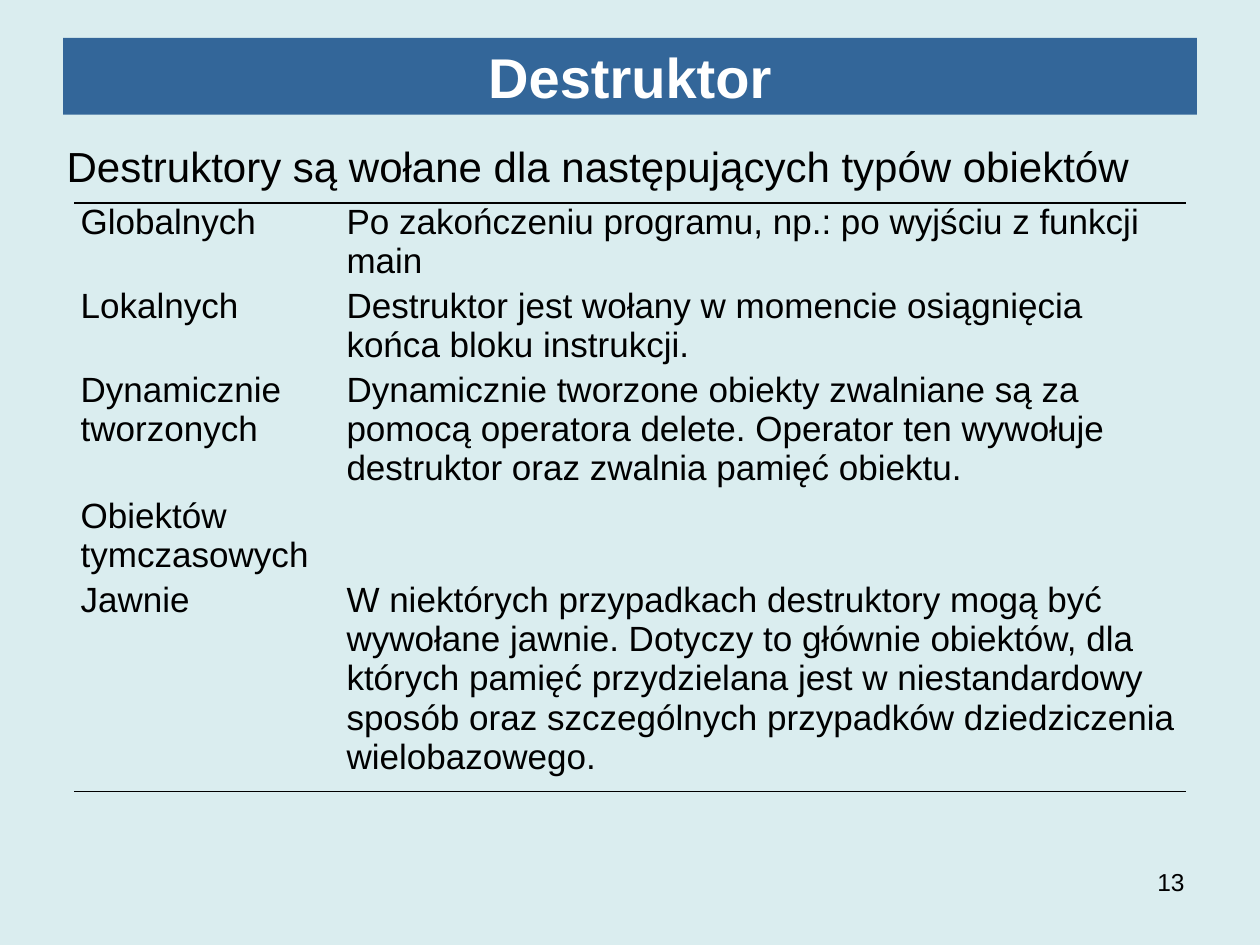
"""Build a slide listing when destructors are called for each kind of object."""
from dataclasses import dataclass

from lxml import etree
from pptx import Presentation
from pptx.dml.color import RGBColor
from pptx.enum.text import MSO_ANCHOR, MSO_AUTO_SIZE, PP_ALIGN
from pptx.oxml.ns import qn
from pptx.util import Inches, Pt

LEFT, CENTER, RIGHT = PP_ALIGN.LEFT, PP_ALIGN.CENTER, PP_ALIGN.RIGHT
TOP, MIDDLE = MSO_ANCHOR.TOP, MSO_ANCHOR.MIDDLE
NO_FIT = MSO_AUTO_SIZE.NONE
NO_STYLE = "{2D5ABB26-0587-4C30-8999-92F81FD0307C}"


@dataclass(frozen=True)
class Theme:
    """Colours, font and type sizes of the slide."""
    font: str = "Arial"
    background: str = "DAEDEF"
    banner: str = "336699"
    light: str = "FFFFFF"
    dark: str = "000000"
    title: int = 32
    lead: int = 24
    table: int = 20
    number: int = 14


@dataclass(frozen=True)
class ObjectKind:
    """One table row: a kind of object, its destruction rule and its line count."""
    name: str
    rule: str
    lines: int


THEME = Theme()
LINE_HEIGHT = 4.67 / 14
COLUMNS = (2.11, 6.71)
KINDS = (
    ObjectKind("Globalnych", "Po zakończeniu programu, np.: po wyjściu z funkcji main", 2),
    ObjectKind("Lokalnych", "Destruktor jest wołany w momencie osiągnięcia końca bloku instrukcji.", 2),
    ObjectKind("Dynamicznie tworzonych",
               "Dynamicznie tworzone obiekty zwalniane są za pomocą operatora delete. "
               "Operator ten wywołuje destruktor oraz zwalnia pamięć obiektu.", 3),
    ObjectKind("Obiektów tymczasowych", "", 2),
    ObjectKind("Jawnie",
               "W niektórych przypadkach destruktory mogą być wywołane jawnie. "
               "Dotyczy to głównie obiektów, dla których pamięć przydzielana jest "
               "w niestandardowy sposób oraz szczególnych przypadków dziedziczenia "
               "wielobazowego.", 5),
)


def write(tf, text: str, size: int, color: str = THEME.dark,
          align=LEFT, bold: bool = False) -> None:
    """Write one formatted run into the first paragraph."""
    p = tf.paragraphs[0]
    p.alignment = align
    r = p.add_run()
    r.text = text
    r.font.name = THEME.font
    r.font.size = Pt(size)
    r.font.bold = bold
    r.font.color.rgb = RGBColor.from_string(color)


def place(sp, left: float, top: float, width: float, height: float) -> None:
    """Move and size a shape, in inches."""
    sp.left, sp.top = Inches(left), Inches(top)
    sp.width, sp.height = Inches(width), Inches(height)


def add_title(s, text: str) -> None:
    """Turn the title placeholder into the banner."""
    sp = s.shapes.title
    place(sp, 0.5, 0.3, 9, 0.61)
    sp.fill.solid()
    sp.fill.fore_color.rgb = RGBColor.from_string(THEME.banner)
    tf = sp.text_frame
    tf.auto_size = NO_FIT
    tf.vertical_anchor = MIDDLE
    write(tf, text, THEME.title, THEME.light, CENTER, True)


def add_text(s, box: tuple[float, ...], text: str, size: int,
             align=LEFT, wrap: bool = True) -> None:
    """Add a text box with one run."""
    sp = s.shapes.add_textbox(*map(Inches, box))
    sp.text_frame.word_wrap = wrap
    write(sp.text_frame, text, size, align=align)


def add_rule(cell, side: str) -> None:
    """Draw a one-point border on the top (T) or bottom (B) of a cell."""
    ln = etree.Element(qn(f"a:ln{side}"), w=str(Pt(1)))
    fill = etree.SubElement(ln, qn("a:solidFill"))
    etree.SubElement(fill, qn("a:srgbClr"), val=THEME.dark)
    cell._tc.get_or_add_tcPr().insert(0, ln)


def add_kinds(s, kinds: tuple[ObjectKind, ...]) -> None:
    """Add the table of object kinds, ruled above and below."""
    height = LINE_HEIGHT * sum(kind.lines for kind in kinds)
    frame = s.shapes.add_table(len(kinds), len(COLUMNS), Inches(0.59), Inches(1.61),
                               Inches(sum(COLUMNS)), Inches(height))
    table = frame.table
    table.first_row = table.horz_banding = False
    table._tbl.tblPr.find(qn("a:tableStyleId")).text = NO_STYLE
    for column, width in zip(table.columns, COLUMNS):
        column.width = Inches(width)
    for i, kind in enumerate(kinds):
        table.rows[i].height = Inches(LINE_HEIGHT * kind.lines)
        for cell, text in zip(table.rows[i].cells, (kind.name, kind.rule)):
            cell.margin_left = cell.margin_right = Inches(0.05)
            cell.margin_top = cell.margin_bottom = 0
            cell.vertical_anchor = TOP
            cell.fill.background()
            if text:
                write(cell.text_frame, text, THEME.table)
            if i == 0:
                add_rule(cell, "T")
            if i == len(kinds) - 1:
                add_rule(cell, "B")


def main() -> None:
    """Build and save the presentation."""
    prs = Presentation()
    prs.slide_width, prs.slide_height = Inches(10), Inches(7.5)
    s = prs.slides.add_slide(prs.slide_layouts[5])
    s.background.fill.solid()
    s.background.fill.fore_color.rgb = RGBColor.from_string(THEME.background)
    add_title(s, "Destruktor")
    add_text(s, (7.17, 6.83, 2.33, 0.52), "13", THEME.number, RIGHT)
    add_text(s, (0.43, 1.07, 8.81, 0.5),
             "Destruktory są wołane dla następujących typów obiektów",
             THEME.lead, wrap=False)
    add_kinds(s, KINDS)
    prs.save("out.pptx")


if __name__ == "__main__":
    main()
